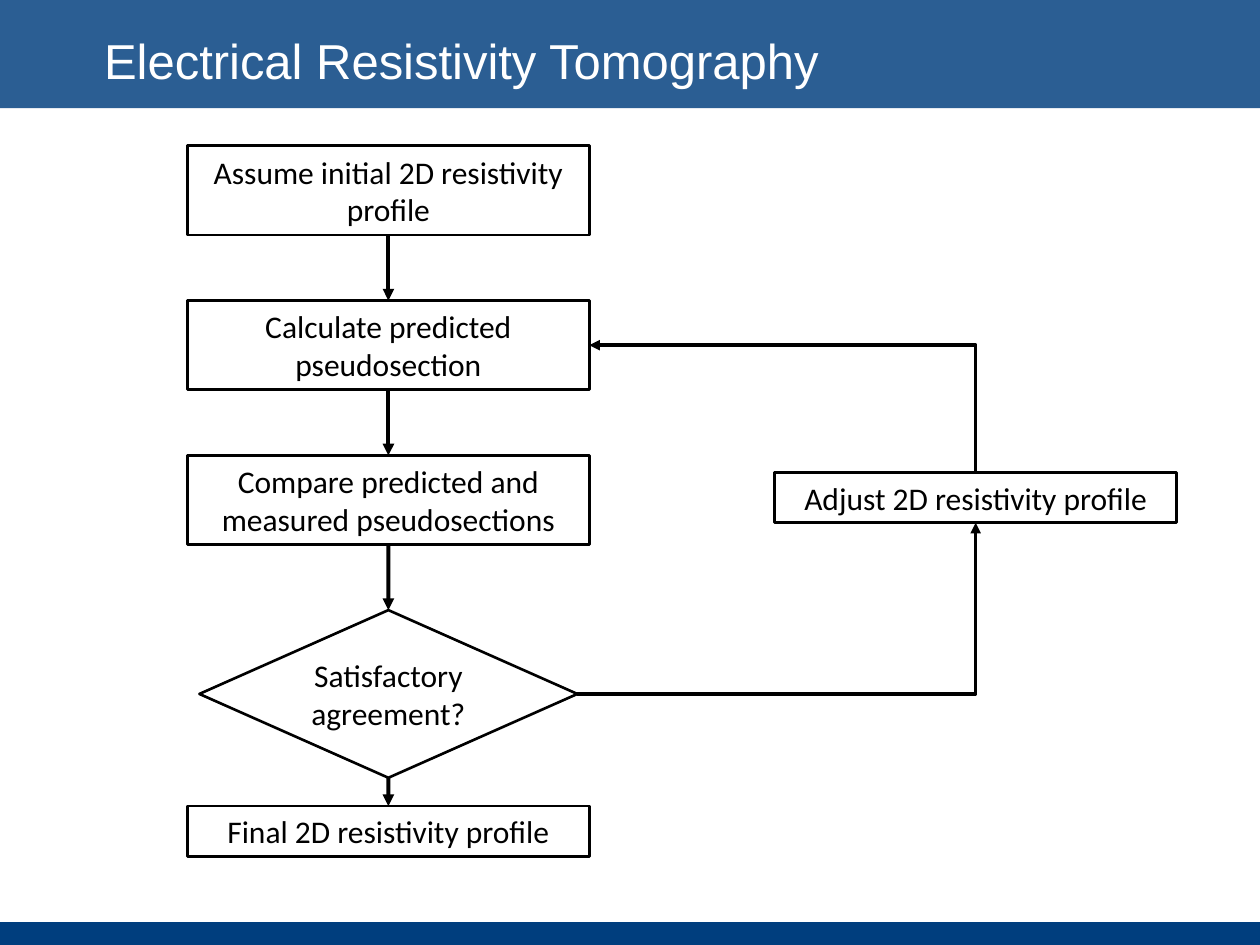
from lxml import etree
from pptx import Presentation
from pptx.dml.color import RGBColor
from pptx.enum.shapes import MSO_CONNECTOR, MSO_SHAPE
from pptx.enum.text import MSO_ANCHOR, PP_ALIGN
from pptx.oxml.ns import qn
from pptx.util import Cm, Pt

RECTANGLE, DIAMOND = MSO_SHAPE.RECTANGLE, MSO_SHAPE.DIAMOND
STRAIGHT = MSO_CONNECTOR.STRAIGHT
MIDDLE = MSO_ANCHOR.MIDDLE
LEFT, CENTER = PP_ALIGN.LEFT, PP_ALIGN.CENTER
TOP, BOTTOM = 0, 2

SLIDE_W, SLIDE_H = 25.4, 19.05
HEADER_H, FOOTER_H = 2.18, 0.46
NAVY, BLACK, WHITE = "003E7E", "000000", "FFFFFF"
TITLE_FONT = {"name": "Arial", "size": Pt(28)}
STEP_FONT = {"name": "Calibri", "size": Pt(18)}

STEP_W, STEP_H, SHORT_H = 8.1, 1.8, 1.02
STEP_PITCH = 3.12
DECISION_W, DECISION_H = 7.62, 3.38
STEPS = [
    "Assume initial 2D resistivity profile",
    "Calculate predicted pseudosection",
    "Compare predicted and measured pseudosections",
]


def paint(color_format, hex_color):
    color_format.rgb = RGBColor.from_string(hex_color)


def apply(target, values):
    for name, value in values.items():
        setattr(target, name, value)


def write(shape, text, font, color, align, wrap=True):
    frame = shape.text_frame
    apply(frame, {"word_wrap": wrap, "vertical_anchor": MIDDLE})
    frame.text = text
    paragraph = frame.paragraphs[0]
    paragraph.alignment = align
    apply(paragraph.font, font)
    paint(paragraph.font.color, color)


def add_band(slide, top, height, opacity=100):
    band = slide.shapes.add_shape(RECTANGLE, 0, Cm(top), Cm(SLIDE_W), Cm(height))
    band.shadow.inherit = False
    band.fill.solid()
    paint(band.fill.fore_color, NAVY)
    band.line.fill.background()
    if opacity < 100:
        color = band.fill._xPr.find(qn("a:solidFill"))[0]
        etree.SubElement(color, qn("a:alpha"), val=str(opacity * 1000))


def add_step(slide, text, left, top, width, height, preset=RECTANGLE):
    step = slide.shapes.add_shape(preset, Cm(left), Cm(top), Cm(width), Cm(height))
    step.shadow.inherit = False
    step.fill.background()
    step.line.width = Pt(1.5)
    paint(step.line.color, BLACK)
    write(step, text, STEP_FONT, BLACK, CENTER, wrap=preset == RECTANGLE)
    return step


def style_arrow(arrow, width):
    arrow.line.width = Pt(width)
    paint(arrow.line.color, BLACK)
    etree.SubElement(arrow.line._get_or_add_ln(), qn("a:tailEnd"), type="triangle")


def add_down_arrow(slide, upper, lower):
    arrow = slide.shapes.add_connector(STRAIGHT, 0, 0, 0, 0)
    arrow.begin_connect(upper, BOTTOM)
    arrow.end_connect(lower, TOP)
    style_arrow(arrow, 2.25)
    etree.SubElement(arrow._element.spPr, qn("a:effectLst"))


def add_bent_arrow(slide, start, *corners):
    builder = slide.shapes.build_freeform(*start)
    builder.add_line_segments(corners, close=False)
    arrow = builder.convert_to_shape()
    arrow.shadow.inherit = False
    arrow.fill.background()
    style_arrow(arrow, 2)


def add_header(slide, left, top, width, height):
    add_band(slide, 0, HEADER_H, opacity=83)
    title = slide.shapes.add_textbox(Cm(left), Cm(top), Cm(width), Cm(height))
    write(title, "Electrical Resistivity Tomography", TITLE_FONT, WHITE, LEFT)


def add_main_flow(slide, left, top):
    flow = [
        add_step(slide, text, left, top + i * STEP_PITCH, STEP_W, STEP_H)
        for i, text in enumerate(STEPS)
    ]
    decision = add_step(
        slide, "Satisfactory\vagreement?",
        left + (STEP_W - DECISION_W) / 2, top + len(STEPS) * STEP_PITCH,
        DECISION_W, DECISION_H, DIAMOND,
    )
    final = add_step(slide, "Final 2D resistivity profile",
                     left, top + 13.31, STEP_W, SHORT_H)
    flow += [decision, final]
    for upper, lower in zip(flow, flow[1:]):
        add_down_arrow(slide, upper, lower)
    return flow[1], decision


def add_feedback_loop(slide, left, top, calculate, decision):
    adjust = add_step(slide, "Adjust 2D resistivity profile",
                      left, top, STEP_W, SHORT_H)
    center_x = adjust.left + adjust.width // 2
    decision_y = decision.top + decision.height // 2
    calculate_y = calculate.top + calculate.height // 2
    add_bent_arrow(
        slide, (decision.left + decision.width, decision_y),
        (center_x, decision_y), (center_x, adjust.top + adjust.height),
    )
    add_bent_arrow(
        slide, (center_x, adjust.top),
        (center_x, calculate_y), (calculate.left + calculate.width, calculate_y),
    )


def main():
    prs = Presentation()
    apply(prs, {"slide_width": Cm(SLIDE_W), "slide_height": Cm(SLIDE_H)})
    slide = prs.slides.add_slide(prs.slide_layouts[6])
    add_band(slide, SLIDE_H - FOOTER_H, FOOTER_H)
    add_header(slide, 1.85, 0.48, 17.2, 1.47)
    calculate, decision = add_main_flow(slide, 3.78, 2.94)
    add_feedback_loop(slide, 15.62, 9.52, calculate, decision)
    prs.save("out.pptx")


if __name__ == "__main__":
    main()
